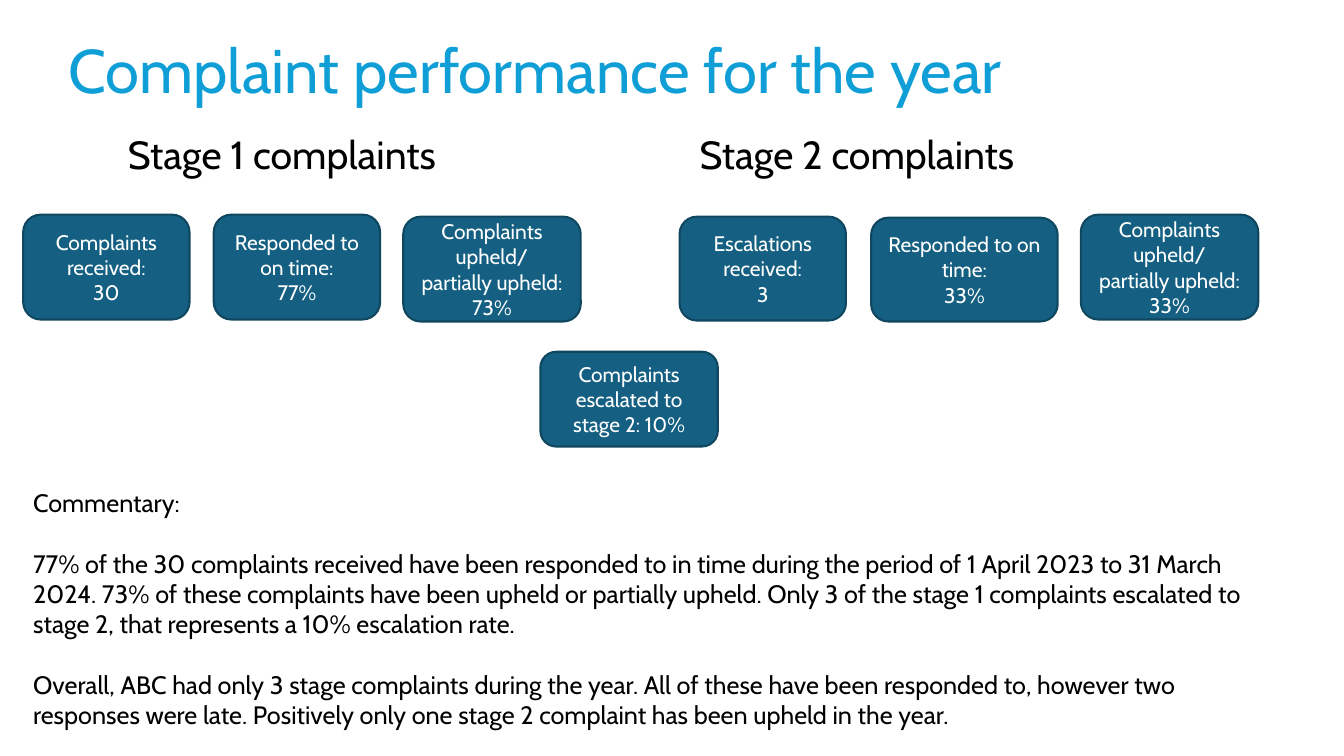
from pptx import Presentation
from pptx import util as u
from pptx.dml.color import RGBColor
from pptx.enum import shapes, text

FONT = "Cabin"
BLACK, WHITE, TITLE_BLUE = "000000", "FFFFFF", "0F9ED5"
CARD_FILL, CARD_LINE = "156082", "104760"

HEADINGS = [(1.17, "Stage 1 complaints"), (6.84, "Stage 2 complaints")]
CARDS = [
    (0.23, 2.13, 1.65, 1.04, ["Complaints received:", "30"]),
    (2.12, 2.13, 1.65, 1.04, ["Responded to on time:", "77%"]),
    (4, 2.15, 1.76, 1.04, ["Complaints upheld/", "partially upheld:", "73%"]),
    (6.74, 2.15, 1.65, 1.03, ["Escalations received:", "3"]),
    (8.64, 2.16, 1.85, 1.03, ["Responded to on time:", "33%"]),
    (10.72, 2.13, 1.76, 1.04, ["Complaints upheld/", "partially upheld:", "33%"]),
    (5.36, 3.49, 1.76, 0.94, ["Complaints escalated to stage 2: 10%"]),
]
COMMENTARY = [
    "Commentary:",
    "77% of the 30 complaints received have been responded to in time during the period "
    "of 1 April 2023 to 31 March 2024. 73% of these complaints have been upheld or "
    "partially upheld. Only 3 of the stage 1 complaints escalated to stage 2, that "
    "represents a 10% escalation rate.",
    "Overall, ABC had only 3 stage complaints during the year. All of these have been "
    "responded to, however two responses were late. Positively only one stage 2 "
    "complaint has been upheld in the year.",
]


def rgb(value):
    """Return the colour for a hex string."""
    return RGBColor.from_string(value)


def write(shape, lines, size, color, anchor=text.MSO_ANCHOR.TOP, wrap=True, **formats):
    """Fill a shape with one formatted paragraph per line."""
    frame = shape.text_frame
    frame.word_wrap = wrap
    frame.vertical_anchor = anchor
    frame.text = "\n".join(lines)
    for paragraph in frame.paragraphs:
        for name, value in formats.items():
            setattr(paragraph, name, value)
        font = paragraph.runs[0].font
        for name, value in {"name": FONT, "size": u.Pt(size)}.items():
            setattr(font, name, value)
        font.color.rgb = rgb(color)


def add_text(slide, box, lines, size, color, **options):
    """Add a text box at the given left, top, width and height."""
    shape = slide.shapes.add_textbox(*map(u.Inches, box))
    write(shape, lines, size, color, **options)


def add_card(slide, box, lines):
    """Add a rounded card with centred white text."""
    kind = shapes.MSO_SHAPE.ROUNDED_RECTANGLE
    shape = slide.shapes.add_shape(kind, *map(u.Inches, box))
    shape.shadow.inherit = False
    shape.fill.solid()
    shape.fill.fore_color.rgb = rgb(CARD_FILL)
    shape.line.color.rgb = rgb(CARD_LINE)
    shape.line.width = u.Pt(1.5)
    write(shape, lines, 15, WHITE, anchor=text.MSO_ANCHOR.MIDDLE,
          alignment=text.PP_ALIGN.CENTER)


def main():
    """Build the complaint performance slide."""
    presentation = Presentation()
    presentation.slide_width = u.Inches(13.33)
    presentation.slide_height = u.Inches(7.5)
    slide = presentation.slides.add_slide(presentation.slide_layouts[6])
    add_text(slide, (0.58, 0, 11.5, 1.45), ["Complaint performance for the year"], 44,
             TITLE_BLUE, anchor=text.MSO_ANCHOR.MIDDLE, line_spacing=0.9)
    for left, heading in HEADINGS:
        add_text(slide, (left, 1.24, 3.44, 0.57), [heading], 28, BLACK, wrap=False)
    for *box, lines in CARDS:
        add_card(slide, box, lines)
    add_text(slide, (0.23, 4.79, 12.59, 2.83), COMMENTARY, 18, BLACK,
             space_after=u.Pt(21.6))
    presentation.save("out.pptx")


if __name__ == "__main__":
    main()
